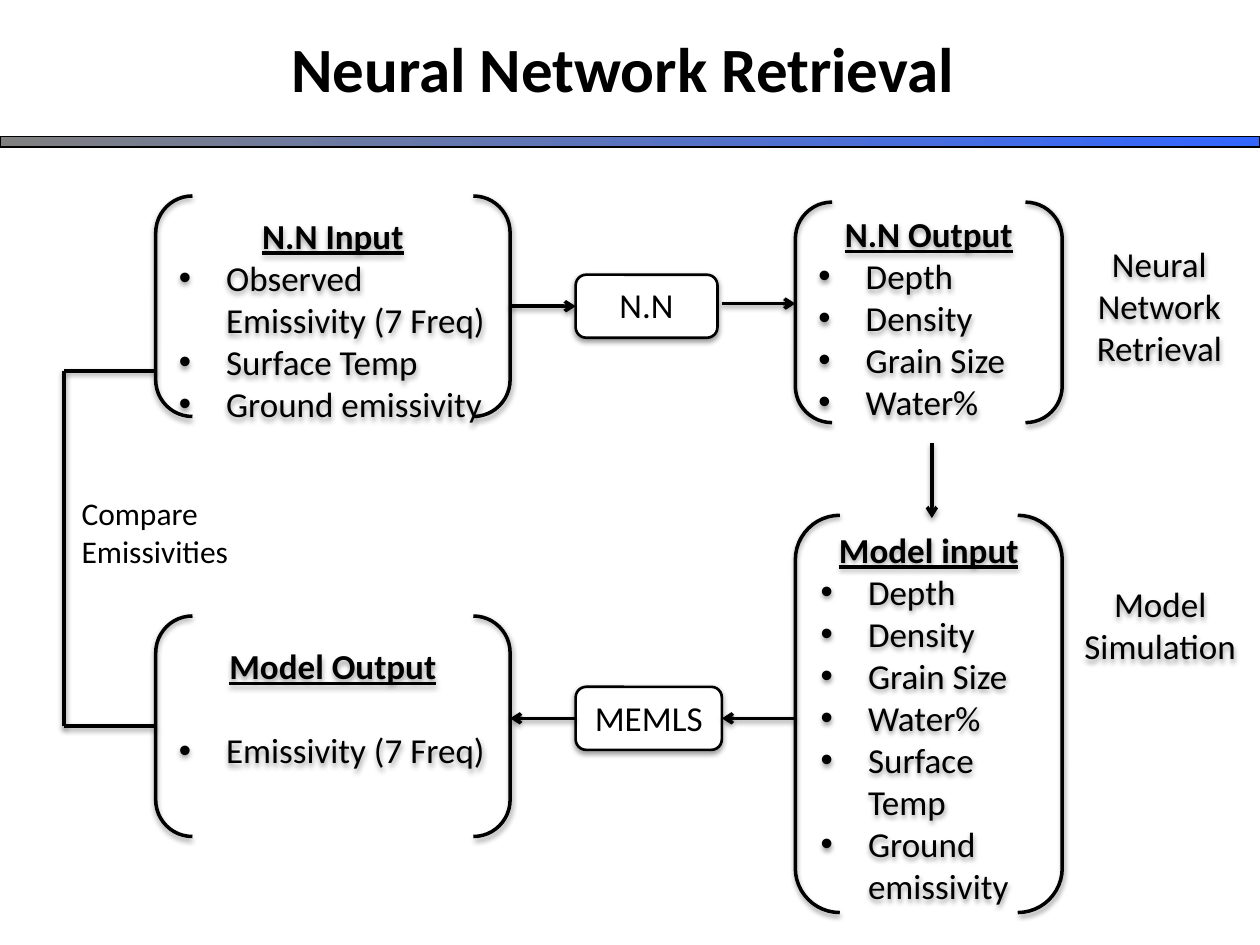
from lxml.etree import SubElement
from pptx import Presentation
from pptx.dml.color import RGBColor
from pptx.enum.shapes import MSO_CONNECTOR, MSO_SHAPE
from pptx.enum.text import MSO_ANCHOR as ANCHOR, PP_ALIGN as ALIGN
from pptx.oxml.ns import qn
from pptx.util import Pt

BLACK = RGBColor(0, 0, 0)
WHITE = RGBColor(255, 255, 255)
GREY = RGBColor(0x80, 0x80, 0x80)
BLUE = RGBColor(0x33, 0x66, 0xFF)
FONT = "Calibri"
TOP, LEFT, BOTTOM, RIGHT = range(4)
HANG = 27  # hanging indent of bulleted lines


def set_shadow(s):
    """Give a shape or connector a soft shadow straight below it."""
    effects = SubElement(s._element.spPr, qn("a:effectLst"))
    shadow = SubElement(effects, qn("a:outerShdw"), blurRad=str(Pt(3.1)),
                        dist=str(Pt(1.6)), dir="5400000", rotWithShape="0")
    color = SubElement(shadow, qn("a:srgbClr"), val=str(BLACK))
    SubElement(color, qn("a:alpha"), val="38000")


def set_bullet(p):
    pPr = p._p.get_or_add_pPr()
    pPr.set("marL", str(Pt(HANG)))
    pPr.set("indent", str(-Pt(HANG)))
    SubElement(pPr, qn("a:buFont"), typeface="Arial")
    SubElement(pPr, qn("a:buChar"), char="•")


def add_text(tf, text, size=20, bold=False, underline=False, align=ALIGN.CENTER,
             bullet=False, before=0, spacing=None):
    """Write one paragraph, using the empty first one if there is no text yet."""
    p = tf.add_paragraph() if tf.text else tf.paragraphs[0]
    p.alignment = align
    p.space_before = Pt(before)
    if spacing:
        p.line_spacing = spacing
    if bullet:
        set_bullet(p)
    r = p.add_run()
    r.text = text
    r.font.name, r.font.size = FONT, Pt(size)
    r.font.bold, r.font.underline = bold, underline
    r.font.color.rgb = BLACK


def add_label(slide, box, lines, side_inset=7.2, anchor=ANCHOR.TOP, wrap=True,
              shadow=False, **fmt):
    s = slide.shapes.add_textbox(*map(Pt, box))
    tf = s.text_frame
    tf.word_wrap, tf.vertical_anchor = wrap, anchor
    tf.margin_left = tf.margin_right = Pt(side_inset)
    for line in lines:
        add_text(tf, line, **fmt)
    if shadow:
        set_shadow(s)


def add_bracket(slide, box, heading, items, top_inset=0, gap=0):
    """Bracket pair with an underlined heading and bullets below it."""
    s = slide.shapes.add_shape(MSO_SHAPE.DOUBLE_BRACKET, *map(Pt, box))
    s.fill.background()
    s.line.color.rgb, s.line.width = BLACK, Pt(2)
    set_shadow(s)
    tf = s.text_frame
    tf.word_wrap, tf.vertical_anchor = True, ANCHOR.TOP
    tf.margin_top, tf.margin_bottom = Pt(top_inset), 0
    add_text(tf, heading, bold=True, underline=True)
    for i, item in enumerate(items):
        add_text(tf, item, align=ALIGN.LEFT, bullet=True, before=0 if i else gap)
    return s


def add_process(slide, box, name):
    s = slide.shapes.add_shape(MSO_SHAPE.ROUNDED_RECTANGLE, *map(Pt, box))
    s.fill.solid()
    s.fill.fore_color.rgb = WHITE
    s.line.color.rgb, s.line.width = BLACK, Pt(1.5)
    set_shadow(s)
    tf = s.text_frame
    tf.word_wrap, tf.vertical_anchor = True, ANCHOR.TOP
    add_text(tf, name)
    return s


def add_line(slide, start, end, arrow=False, begin_at=None, end_at=None):
    """Straight line; begin_at and end_at are (shape, side) pairs to join."""
    c = slide.shapes.add_connector(MSO_CONNECTOR.STRAIGHT, *map(Pt, start + end))
    c.line.color.rgb, c.line.width = BLACK, Pt(2)
    if arrow:
        SubElement(c.line._get_or_add_ln(), qn("a:tailEnd"), type="arrow")
    set_shadow(c)
    if begin_at:
        c.begin_connect(*begin_at)
    if end_at:
        c.end_connect(*end_at)


def add_title_bar(slide):
    s = slide.shapes.add_shape(MSO_SHAPE.RECTANGLE, 0, Pt(78), Pt(720), Pt(6))
    s.shadow.inherit = False
    s.fill.gradient()
    s.fill.gradient_angle = 0
    for stop, color in zip(s.fill.gradient_stops, (GREY, BLUE)):
        stop.color.rgb = color
    s.line.color.rgb, s.line.width = BLACK, Pt(0.75)


def main():
    prs = Presentation()
    prs.slide_width, prs.slide_height = Pt(720), Pt(540)
    slide = prs.slides.add_slide(prs.slide_layouts[6])

    add_label(slide, (0, 16, 720, 50), ["Neural Network Retrieval "],
              size=36, bold=True, spacing=0.97)
    add_title_bar(slide)

    stage = dict(side_inset=18, anchor=ANCHOR.MIDDLE, shadow=True)
    add_label(slide, (590, 146, 145, 57), ["Neural", "Network Retrieval"], **stage)
    add_label(slide, (588, 331, 150, 52), ["Model Simulation"], **stage)

    snow = ["Depth", "Density", "Grain Size", "Water%"]
    nn_input = add_bracket(
        slide, (89, 112, 202.5, 126), "N.N Input",
        ["Observed Emissivity (7 Freq)", "Surface Temp", "Ground emissivity"],
        top_inset=4.4)
    add_bracket(slide, (454.5, 115.5, 152.5, 126), "N.N Output", snow)
    add_bracket(slide, (454.5, 294.5, 152.5, 227), "Model input",
                snow + ["Surface Temp", "Ground emissivity"])
    model_output = add_bracket(slide, (89, 352, 202.5, 126), "Model Output",
                               ["Emissivity (7 Freq)"], top_inset=10.4, gap=24)
    nn = add_process(slide, (329, 157, 81, 36), "N.N")
    memls = add_process(slide, (329, 392.5, 83.5, 36), "MEMLS")

    add_line(slide, (291.5, 175), (329, 175), arrow=True,
             begin_at=(nn_input, RIGHT), end_at=(nn, LEFT))
    add_line(slide, (412.5, 173.5), (454.5, 173.5), arrow=True)
    add_line(slide, (532.5, 253), (532.5, 296), arrow=True)
    add_line(slide, (454.5, 410.5), (412.5, 410.5), arrow=True,
             end_at=(memls, RIGHT))
    add_line(slide, (329, 410.5), (291.5, 410.5), arrow=True,
             begin_at=(memls, LEFT))

    loop_x, loop_top, loop_bottom = 36.5, 212, 415
    add_line(slide, (89, loop_top), (loop_x, loop_top))
    add_line(slide, (loop_x, loop_top), (loop_x, loop_bottom))
    add_line(slide, (loop_x, loop_bottom), (89, loop_bottom),
             end_at=(model_output, LEFT))
    add_label(slide, (39.5, 279, 99, 51), ["Compare", "Emissivities"],
              wrap=False, size=18, align=ALIGN.LEFT)

    prs.save("out.pptx")


if __name__ == "__main__":
    main()
